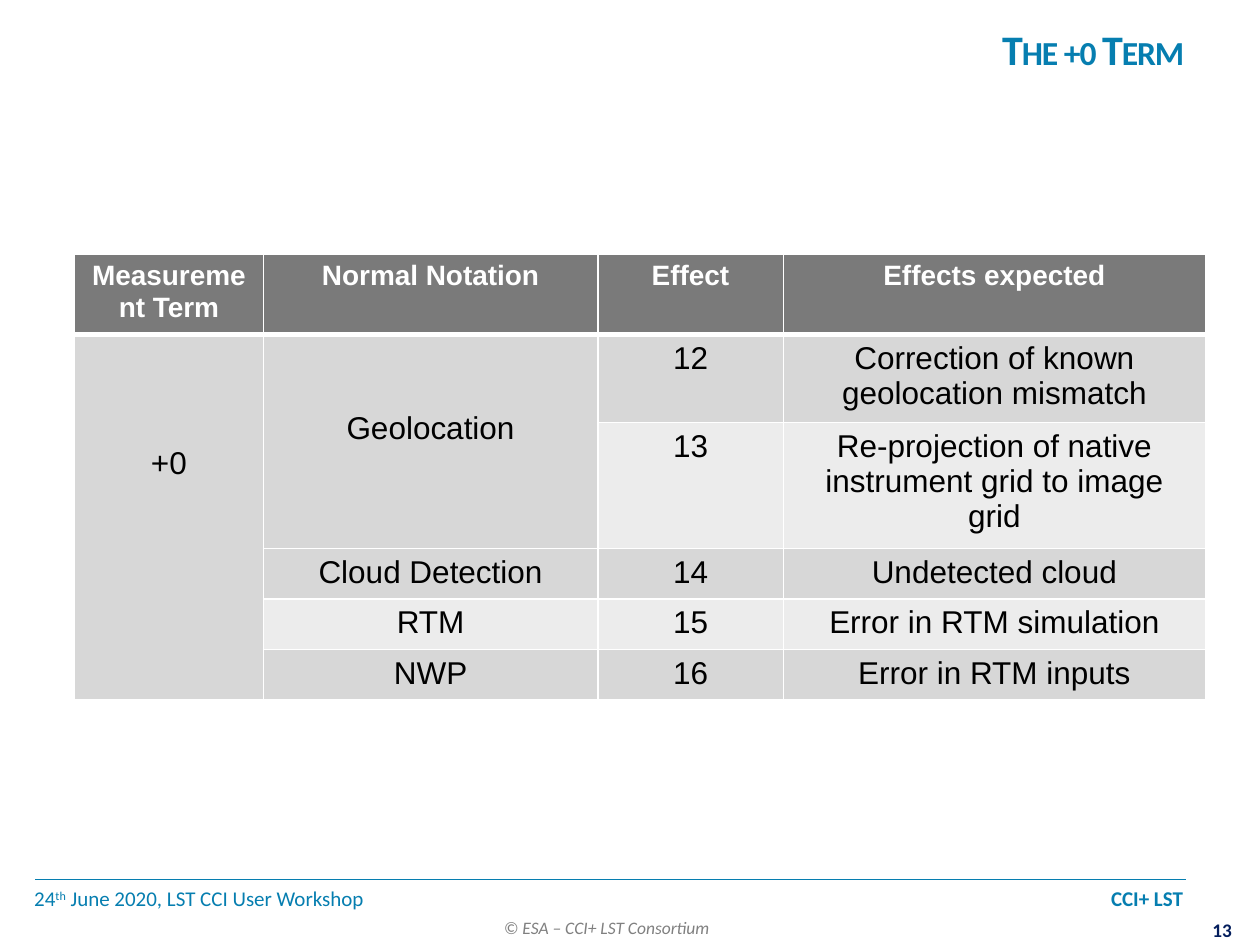
from lxml.etree import SubElement
from pptx import Presentation
from pptx.dml.color import RGBColor
from pptx.enum.shapes import MSO_CONNECTOR
from pptx.enum.text import MSO_ANCHOR, MSO_AUTO_SIZE, PP_ALIGN
from pptx.oxml import parse_xml
from pptx.oxml.ns import nsdecls, qn
from pptx.util import Cm, Pt

TITLE = "The +0 Term"
HEADERS = ["Measurement Term", "Normal Notation", "Effect", "Effects expected"]
ROWS = [
    ["+0", "Geolocation", "12", "Correction of known geolocation mismatch"],
    ["", "", "13", "Re-projection of native instrument grid to image grid"],
    ["", "Cloud Detection", "14", "Undetected cloud"],
    ["", "RTM", "15", "Error in RTM simulation"],
    ["", "NWP", "16", "Error in RTM inputs"],
]
MERGES = [((1, 0), (5, 0), 3), ((1, 1), (2, 1), 2)]
COLUMN_WIDTHS = [3.81, 6.74, 3.74, 8.51]
ROW_HEIGHTS = [1.48, 1.69, 2.38, 0.97, 0.97, 0.97]
LINE_HEIGHT = 0.71
CELL_MARGIN = 0.13

BLUE, NAVY, GREY, WHITE, BLACK = "067EB0", "041E5D", "808080", "FFFFFF", "000000"
HEADER_FILL, BANDS = "7A7A7A", ["D7D7D7", "ECECEC"]

FOOTER = {"name": "Calibri", "size": Pt(12), "color": BLUE}
FOOTER_RUNS = [
    ("24", {}, {}),
    ("th", {}, {"baseline": "30000"}),
    (" June 2020, LST CCI User Workshop\t", {}, {}),
    ("CCI+ LST", {"bold": True}, {}),
]
COPYRIGHT = {"name": "Calibri", "size": Pt(10), "color": GREY, "italic": True}
PAGE = {"name": "Calibri", "size": Pt(11), "color": NAVY, "bold": True}
HEADING = {"name": "Calibri", "size": Pt(24), "color": BLUE, "bold": True}
HEADER = {"name": "Arial", "size": Pt(16), "color": WHITE, "bold": True}
BODY = {"name": "Arial", "size": Pt(18), "color": BLACK, "bold": False}


def rgb(code):
    """Turn a hex string into a colour."""
    return RGBColor.from_string(code)


def add_run(paragraph, text, look, extras=None):
    """Append a formatted run to a paragraph."""
    run = paragraph.add_run()
    run.text = text
    for key, value in look.items():
        if key == "color":
            run.font.color.rgb = rgb(value)
        else:
            setattr(run.font, key, value)
    for key, value in (extras or {}).items():
        run.font._element.set(key, value)


def add_box(slide, place, insets, wrap):
    """Add a text box and return its first paragraph."""
    frame = slide.shapes.add_textbox(*map(Cm, place)).text_frame
    frame.word_wrap = wrap
    sides = ("margin_left", "margin_top", "margin_right", "margin_bottom")
    for side, inset in zip(sides, insets):
        setattr(frame, side, Cm(inset))
    return frame.paragraphs[0]


def add_borders(cell, bottom_width):
    """Draw white borders on the four sides of a cell."""
    properties = cell._tc.get_or_add_tcPr()
    widths = {"lnL": 1, "lnR": 1, "lnT": 1, "lnB": bottom_width}
    for position, (side, width) in enumerate(widths.items()):
        properties.insert(position, parse_xml(
            f'<a:{side} {nsdecls("a")} w="{Pt(width)}"><a:solidFill>'
            f'<a:srgbClr val="{WHITE}"/></a:solidFill></a:{side}>'))


def add_footer(slide):
    """Add the rule, the event line, the copyright line and the page number."""
    event = add_box(slide, (0.69, 17.73, 23.22, 0.76), (0, 0.13, 0, 0.13), True)
    tabs = SubElement(event._p.get_or_add_pPr(), qn("a:tabLst"))
    SubElement(tabs, qn("a:tab"), pos=str(Cm(23.16)), algn="r")
    for text, changes, extras in FOOTER_RUNS:
        add_run(event, text, FOOTER | changes, extras)

    rule = slide.shapes.add_connector(
        MSO_CONNECTOR.STRAIGHT, Cm(0.71), Cm(17.73), Cm(23.9), Cm(17.73))
    rule.line.color.rgb = rgb(BLUE)
    rule.line.width = Pt(1)
    SubElement(rule._element.spPr, qn("a:effectLst"))

    owner = add_box(slide, (9.91, 18.36, 4.72, 0.69), (0.25, 0.13, 0.25, 0.13), False)
    add_run(owner, "© ESA – CCI+ LST Consortium", COPYRIGHT)
    page = add_box(slide, (24.31, 18.52, 0.66, 0.48), (0, 0, 0, 0), False)
    page.alignment = PP_ALIGN.CENTER
    add_run(page, "13", PAGE)


def add_title(slide):
    """Place and format the title."""
    title = slide.shapes.title
    title.left, title.top, title.width, title.height = map(Cm, (8.89, 0.13, 15.01, 1.7))
    frame = title.text_frame
    frame.auto_size = MSO_AUTO_SIZE.NONE
    frame.vertical_anchor = MSO_ANCHOR.MIDDLE
    frame.paragraphs[0].alignment = PP_ALIGN.RIGHT
    add_run(frame.paragraphs[0], TITLE, HEADING, {"cap": "small", "spc": "-60"})


def add_effects(slide):
    """Add the table of effects."""
    content = [HEADERS] + ROWS
    table = slide.shapes.add_table(
        len(content), len(HEADERS), Cm(1.5), Cm(5.13),
        Cm(sum(COLUMN_WIDTHS)), Cm(sum(ROW_HEIGHTS))).table
    for column, width in zip(table.columns, COLUMN_WIDTHS):
        column.width = Cm(width)
    for row, height in zip(table.rows, ROW_HEIGHTS):
        row.height = Cm(height)
    for r, texts in enumerate(content):
        for c, text in enumerate(texts):
            cell = table.cell(r, c)
            cell.fill.solid()
            cell.fill.fore_color.rgb = rgb(BANDS[(r - 1) % 2] if r else HEADER_FILL)
            add_borders(cell, 1 if r else 3)
            if text:
                paragraph = cell.text_frame.paragraphs[0]
                paragraph.alignment = PP_ALIGN.CENTER
                add_run(paragraph, text, BODY if r else HEADER)
    for first, last, lines_above in MERGES:
        cell = table.cell(*first)
        cell.merge(table.cell(*last))
        cell.margin_top = Cm(CELL_MARGIN + lines_above * LINE_HEIGHT)


def main():
    """Build the slide and save it."""
    deck = Presentation()
    deck.slide_width, deck.slide_height = Cm(25.4), Cm(19.05)
    slide = deck.slides.add_slide(deck.slide_layouts[5])
    add_footer(slide)
    add_title(slide)
    add_effects(slide)
    deck.save("out.pptx")


if __name__ == "__main__":
    main()
